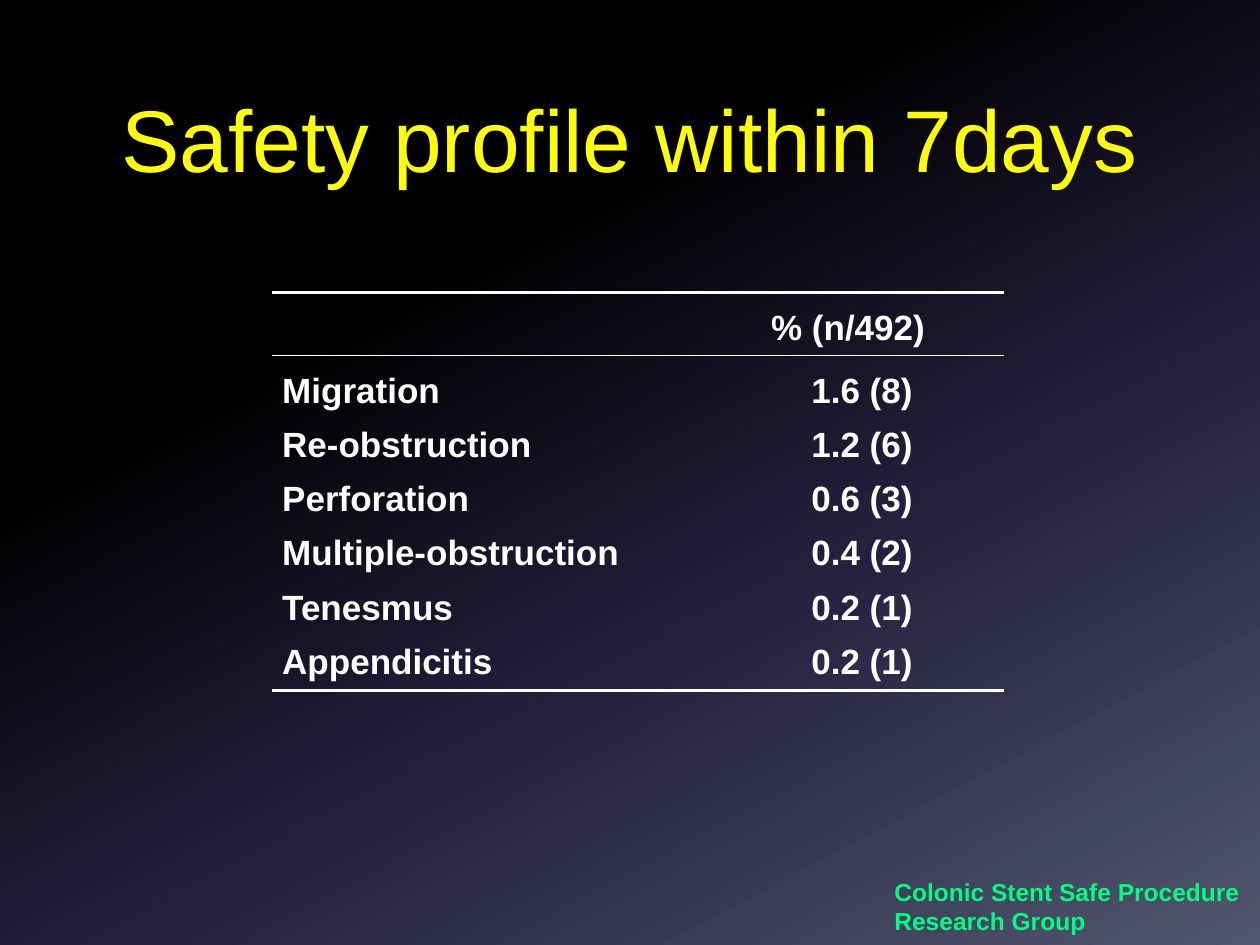
from lxml import etree
from pptx import Presentation
from pptx.dml.color import RGBColor
from pptx.enum import shapes, text
from pptx.oxml.ns import qn
from pptx.util import Inches, Pt

WHITE = "FFFFFF"
STOPS = [(0, "000000"), (31, "000000"), (62, "24213E"), (100, "51566D")]
RULES = [(2.32, 1.5), (2.82, 0.75), (5.48, 1.5)]
ROWS = [
    ("", "% (n/492)"),
    ("Migration", "1.6 (8)"),
    ("Re-obstruction", "1.2 (6)"),
    ("Perforation", "0.6 (3)"),
    ("Multiple-obstruction", "0.4 (2)"),
    ("Tenesmus", "0.2 (1)"),
    ("Appendicitis", "0.2 (1)"),
]


def tint(hue):
    return RGBColor.from_string(hue)


def style(para, size, hue, bold=False):
    font = para.font
    font.name, font.size, font.bold = "Arial", Pt(size), bold
    font.color.rgb = tint(hue)


def shade(slide):
    fill = slide.background.fill
    fill.gradient()
    fill.gradient_angle = 360 - 62
    stops = next(slide.element.iter(qn("a:gsLst")))
    for stop in list(stops):
        stops.remove(stop)
    for place, hue in STOPS:
        stop = etree.SubElement(stops, qn("a:gs"), pos=str(place * 1000))
        etree.SubElement(stop, qn("a:srgbClr"), val=hue)


def add_text(slide, area, lines, size, hue, bold=False, wrap=True):
    box = slide.shapes.add_textbox(*map(Inches, area))
    frame = box.text_frame
    frame.word_wrap = wrap
    frame.text = "\n".join(lines)
    for para in frame.paragraphs:
        style(para, size, hue, bold)
    return frame


def add_title(slide, title):
    frame = add_text(slide, (0.5, 0.62, 9, 1.25), [title], 50, "FFFF00")
    frame.vertical_anchor = text.MSO_ANCHOR.MIDDLE
    frame.margin_bottom = Inches(0.36)
    frame.paragraphs[0].alignment = text.PP_ALIGN.CENTER


def add_rule(slide, top, width):
    ends = map(Inches, (2.16, top, 7.97, top))
    rule = slide.shapes.add_connector(shapes.MSO_CONNECTOR.STRAIGHT, *ends)
    rule.line.width = Pt(width)
    rule.line.color.rgb = tint(WHITE)
    etree.SubElement(rule._element.spPr, qn("a:effectLst"))


def fill_cell(cell, words, indent):
    props = cell._tc.get_or_add_tcPr()
    for side in "LRTB":
        line = etree.SubElement(props, qn("a:ln" + side), w="0")
        etree.SubElement(line, qn("a:noFill"))
    cell.fill.background()
    cell.margin_left, cell.margin_right = Inches(indent), Inches(0.05)
    cell.margin_top, cell.margin_bottom = Inches(0.02), Inches(0.06)
    cell.vertical_anchor = text.MSO_ANCHOR.BOTTOM
    cell.text = words
    style(cell.text_frame.paragraphs[0], 20, WHITE, True)


def add_grid(slide):
    widths = [3.86, 1.95]
    heights = [0.5, 0.5] + [0.43] * (len(ROWS) - 2)
    area = (2.16, 2.32, sum(widths), sum(heights))
    table = slide.shapes.add_table(len(ROWS), 2, *map(Inches, area)).table
    table.first_row = table.horz_banding = False
    for col, width in zip(table.columns, widths):
        col.width = Inches(width)
    for i, (row, height) in enumerate(zip(table.rows, heights)):
        row.height = Inches(height)
        indents = (0.08, 0.42 if i else 0.1)
        for cell, words, indent in zip(row.cells, ROWS[i], indents):
            fill_cell(cell, words, indent)


def main():
    deck = Presentation()
    deck.slide_width, deck.slide_height = Inches(10), Inches(7.5)
    slide = deck.slides.add_slide(deck.slide_layouts[6])
    shade(slide)
    group = ["Colonic Stent Safe Procedure", "Research Group"]
    add_text(slide, (7, 6.91, 2.97, 0.57), group, 14, "00FF80", True, False)
    add_title(slide, "Safety profile within 7days")
    for top, width in RULES:
        add_rule(slide, top, width)
    add_grid(slide)
    deck.save("out.pptx")


if __name__ == "__main__":
    main()
